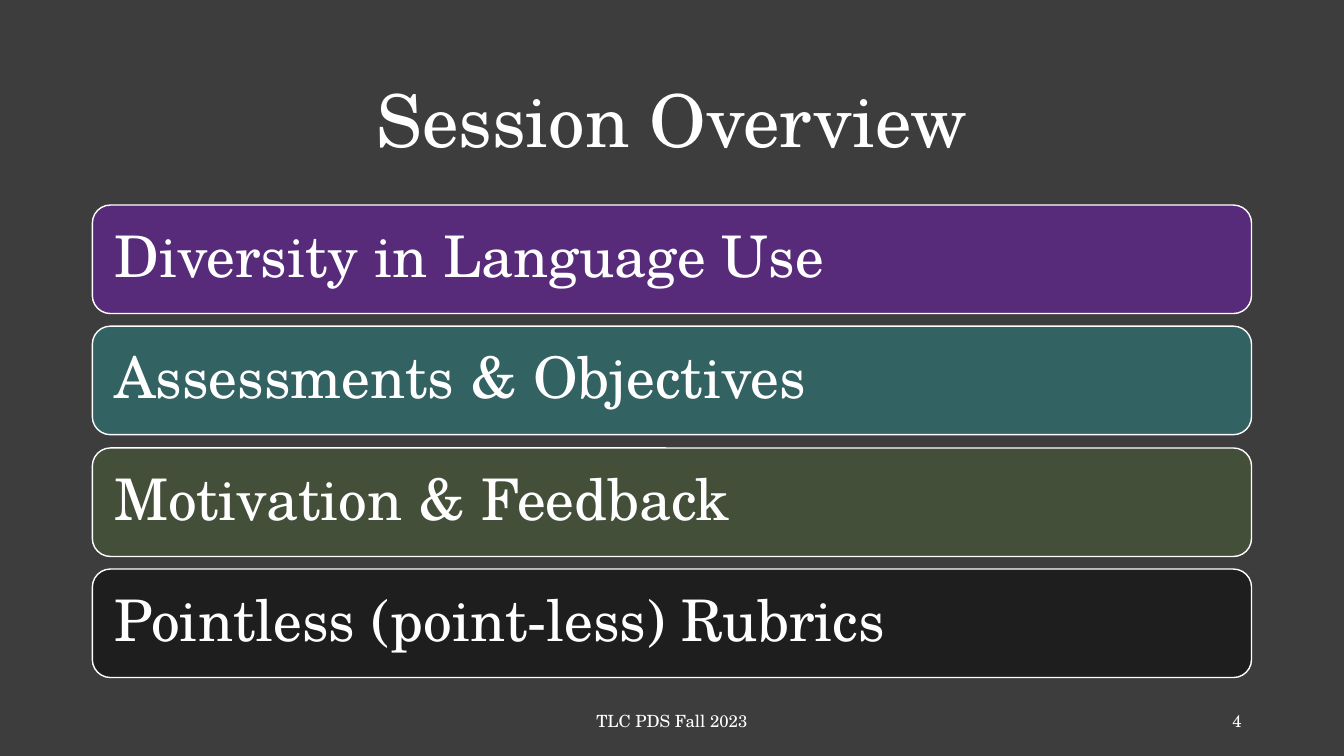
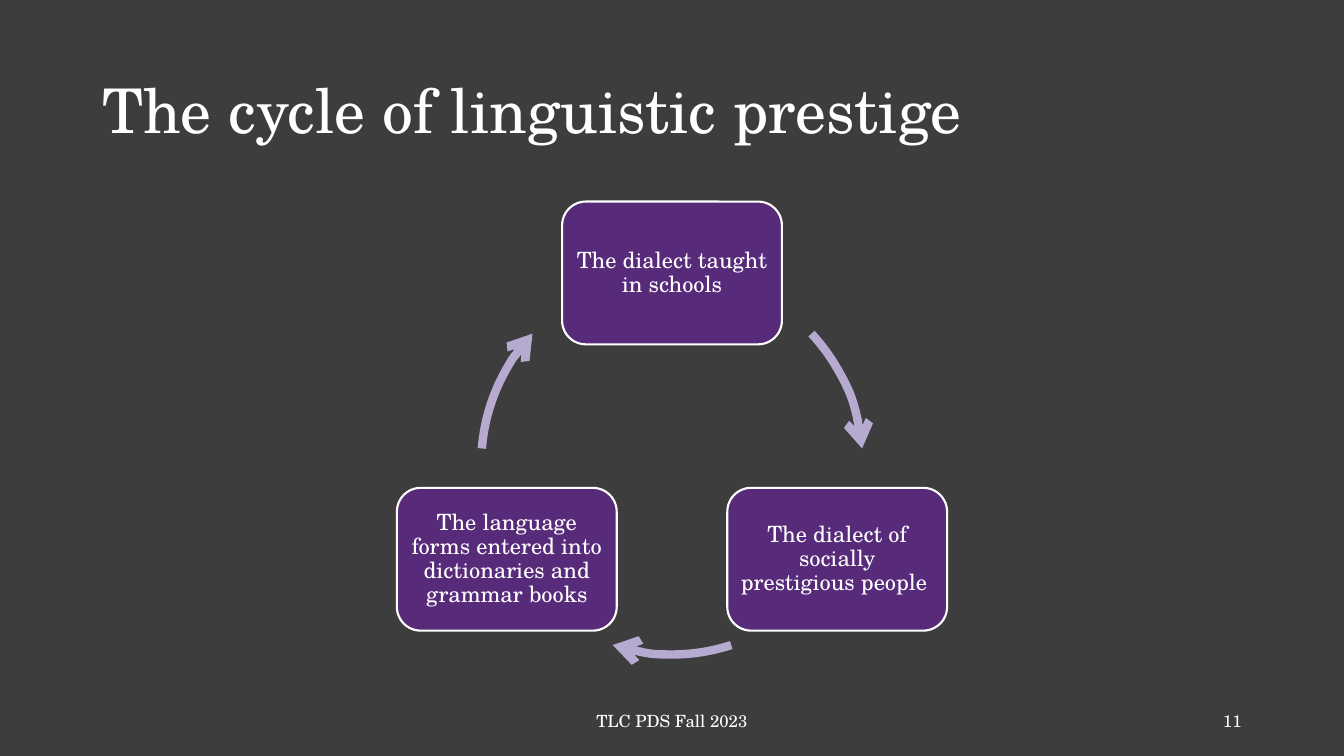
from dataclasses import dataclass
from math import cos, radians, sin

from lxml import etree
from pptx import Presentation
from pptx.dml.color import RGBColor
from pptx.enum.shapes import MSO_SHAPE
from pptx.enum.text import MSO_ANCHOR, PP_ALIGN
from pptx.oxml.ns import qn
from pptx.shapes.autoshape import Shape
from pptx.slide import Slide
from pptx.util import Emu, Pt

PX = 6350  # EMU; 144 px to the inch
WIDTH, HEIGHT = 1920, 1080
FONT = "TeX Gyre Schola"
FOOTER = "TLC PDS Fall 2023"
COLORS = {
    "back": "3D3D3D",
    "white": "FFFFFF",
    "purple": "572B7A",
    "teal": "336263",
    "olive": "444F39",
    "black": "1E1E1E",
    "lilac": "B6AAD0",
}

ROUND = MSO_SHAPE.ROUNDED_RECTANGLE
MIDDLE = MSO_ANCHOR.MIDDLE
LEFT, CENTER, RIGHT = PP_ALIGN.LEFT, PP_ALIGN.CENTER, PP_ALIGN.RIGHT


@dataclass(frozen=True)
class Box:
    left: int
    top: int
    width: int
    height: int

    def emu(self) -> list[Emu]:
        return [px(n) for n in (self.left, self.top, self.width, self.height)]


@dataclass(frozen=True)
class Style:
    size: int
    align: PP_ALIGN = LEFT
    spacing: float = 1.0
    inset: int = 0


@dataclass(frozen=True)
class Bar:
    text: str
    color: str


@dataclass(frozen=True)
class Step:
    """A node of the cycle and the angles of the arrow that leaves it."""
    text: str
    start: float
    end: float


SMALL = 12
BAR_STYLE = Style(41, LEFT, 0.9, 24)
NODE_STYLE = Style(16, CENTER, 0.9, 9)

BARS = [
    Bar("Diversity in Language Use", "purple"),
    Bar("Assessments & Objectives", "teal"),
    Bar("Motivation & Feedback", "olive"),
    Bar("Pointless (point-less) Rubrics", "black"),
]
STACK = Box(132, 293, 1656, 675)
BAR_HEIGHT = 155

STEPS = [
    Step("The dialect taught in schools", -43, -4.6),
    Step("The dialect of socially prestigious people ", 71.9, 108.1),
    Step("The language forms entered into dictionaries and grammar books",
         184.6, 223),
]
RING = 545
RADIUS = RING / 2
HUB_X, HUB_Y = WIDTH / 2, 390 + RADIUS
NODE_W, NODE_H = 314, 204
DEGREE = 60000


def px(count: float) -> Emu:
    return Emu(round(count * PX))


def color(name: str) -> RGBColor:
    return RGBColor.from_string(COLORS[name])


def write(shape: Shape, text: str, style: Style) -> None:
    frame = shape.text_frame
    frame.word_wrap = True
    frame.vertical_anchor = MIDDLE
    if style.inset:
        frame.margin_left = frame.margin_right = px(style.inset)
        frame.margin_top = frame.margin_bottom = px(style.inset)
    para = frame.paragraphs[0]
    para.alignment = style.align
    para.line_spacing = style.spacing
    run = para.add_run()
    run.text = text
    run.font.name = FONT
    run.font.size = Pt(style.size)
    run.font.color.rgb = color("white")


def add_text(slide: Slide, box: Box, text: str, style: Style) -> None:
    write(slide.shapes.add_textbox(*box.emu()), text, style)


def add_card(slide: Slide, box: Box, text: str, style: Style,
             fill: str, line: float) -> None:
    card = slide.shapes.add_shape(ROUND, *box.emu())
    card.shadow.inherit = False
    card.fill.solid()
    card.fill.fore_color.rgb = color(fill)
    card.line.color.rgb = color("white")
    card.line.width = Pt(line)
    write(card, text, style)


def on_ring(angle: float) -> tuple[float, float]:
    turn = radians(angle)
    return HUB_X + RADIUS * cos(turn), HUB_Y + RADIUS * sin(turn)


def add_arc(slide: Slide, start: float, end: float) -> None:
    """Draw a curved arrow along the ring, in a frame as large as the ring."""
    left, top = HUB_X - RADIUS, HUB_Y - RADIUS
    frame = slide.shapes.build_freeform(px(left), px(top))
    frame.add_line_segments([(px(left + RING), px(top + RING))], close=False)
    arc = frame.convert_to_shape()
    props = arc.element.spPr

    track = props.find(".//" + qn("a:path"))
    for part in list(track):
        track.remove(part)
    x, y = on_ring(start)
    move = etree.SubElement(track, qn("a:moveTo"))
    etree.SubElement(move, qn("a:pt"), x=str(px(x - left)), y=str(px(y - top)))
    reach = str(px(RADIUS))
    etree.SubElement(track, qn("a:arcTo"), wR=reach, hR=reach,
                     stAng=str(round(start % 360 * DEGREE)),
                     swAng=str(round((end - start) * DEGREE)))

    arc.shadow.inherit = False
    arc.fill.background()
    arc.line.color.rgb = color("lilac")
    arc.line.width = Pt(6)
    etree.SubElement(props.find(qn("a:ln")), qn("a:tailEnd"), type="arrow")


def add_slide(deck: Presentation, title: str, box: Box, style: Style,
              number: int) -> Slide:
    slide = deck.slides.add_slide(deck.slide_layouts[6])
    fill = slide.background.fill
    fill.solid()
    fill.fore_color.rgb = color("back")
    add_text(slide, box, title, style)
    add_text(slide, Box(636, 1001, 648, 57), FOOTER, Style(SMALL, CENTER))
    add_text(slide, Box(1356, 1001, 432, 57), str(number), Style(SMALL, RIGHT))
    return slide


def add_bars(slide: Slide) -> None:
    pitch = (STACK.height - BAR_HEIGHT) / (len(BARS) - 1)
    for i, bar in enumerate(BARS):
        top = STACK.top + round(i * pitch)
        box = Box(STACK.left, top, STACK.width, BAR_HEIGHT)
        add_card(slide, box, bar.text, BAR_STYLE, bar.color, 1)


def add_cycle(slide: Slide) -> None:
    for i, step in enumerate(STEPS):
        x, y = on_ring(i * 360 / len(STEPS) - 90)
        box = Box(round(x - NODE_W / 2), round(y - NODE_H / 2), NODE_W, NODE_H)
        add_card(slide, box, step.text, NODE_STYLE, "purple", 1.5)
        add_arc(slide, step.start, step.end)


def main() -> None:
    deck = Presentation()
    deck.slide_width, deck.slide_height = px(WIDTH), px(HEIGHT)
    add_bars(add_slide(deck, "Session Overview", Box(132, 88, 1656, 179),
                       Style(52, CENTER, 0.9), 4))
    add_cycle(add_slide(deck, "The cycle of linguistic prestige",
                        Box(132, 57, 1656, 210), Style(44, LEFT, 0.9), 11))
    deck.save("out.pptx")


if __name__ == "__main__":
    main()
